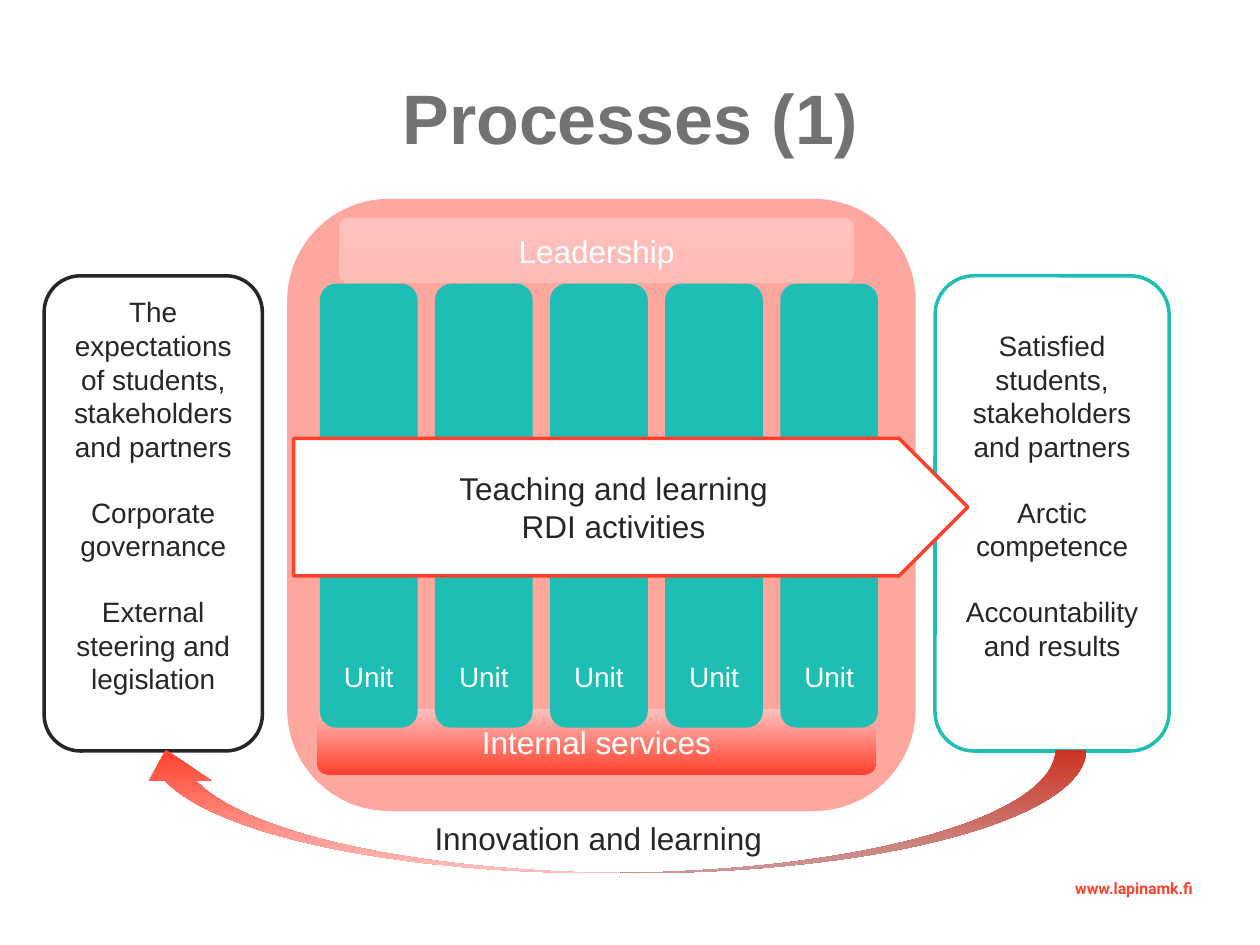
from pptx import Presentation
from pptx.dml.color import RGBColor
from pptx.enum.shapes import MSO_SHAPE
from pptx.enum.text import MSO_ANCHOR, PP_ALIGN
from pptx.util import Cm, Pt

ROUNDED = MSO_SHAPE.ROUNDED_RECTANGLE
PENTAGON = MSO_SHAPE.PENTAGON
CURVED_ARROW = MSO_SHAPE.CURVED_DOWN_ARROW
MIDDLE, BOTTOM = MSO_ANCHOR.MIDDLE, MSO_ANCHOR.BOTTOM
CENTER, LEFT = PP_ALIGN.CENTER, PP_ALIGN.LEFT

WHITE = RGBColor(0xFF, 0xFF, 0xFF)
DARK = RGBColor(0x26, 0x26, 0x26)
GREY = RGBColor(0x72, 0x72, 0x72)
RED = RGBColor(0xFF, 0x40, 0x2B)
SALMON = RGBColor(0xFE, 0xA7, 0x9E)
PINK = RGBColor(0xFD, 0xBC, 0xB5)
PALE_PINK = RGBColor(0xFF, 0xC0, 0xBE)
TEAL = RGBColor(0x1E, 0xBE, 0xB4)

UNIT_COUNT = 5
UNIT_LEFT, UNIT_STEP = 6.45, 2.32


def write_text(shape, lines, size, color, align=CENTER, anchor=MIDDLE,
               gap=0, font_name="Arial", bold=False):
    """Fill a shape with one paragraph per line; gap is the space between them."""
    text_frame = shape.text_frame
    text_frame.word_wrap = True
    text_frame.vertical_anchor = anchor
    text_frame.text = "\n".join(lines)
    for index, paragraph in enumerate(text_frame.paragraphs):
        paragraph.alignment = align
        paragraph.space_before = Pt(gap if index else 0)
        for run in paragraph.runs:
            run.font.name = font_name
            run.font.size = Pt(size)
            run.font.bold = bold
            run.font.color.rgb = color


def add_block(slide, kind, box, fill, line=None):
    """Add a shape; a pair of colours as fill makes a gradient from bottom to top."""
    shape = slide.shapes.add_shape(kind, *[Cm(value) for value in box])
    shape.shadow.inherit = False
    if isinstance(fill, list):
        shape.fill.gradient()
        shape.fill.gradient_angle = 90
        for stop, color, position in zip(shape.fill.gradient_stops, fill, (0, 1)):
            stop.color.rgb = color
            stop.position = position
    else:
        shape.fill.solid()
        shape.fill.fore_color.rgb = fill
    if line is None:
        shape.line.fill.background()
    else:
        shape.line.color.rgb = line
        shape.line.width = Pt(2)
    return shape


def add_label(slide, box, text, size, color, **style):
    label = slide.shapes.add_textbox(*[Cm(value) for value in box])
    write_text(label, [text], size, color, anchor=MSO_ANCHOR.TOP, **style)


def add_title(slide, text):
    title = slide.shapes.title
    title.left, title.top = Cm(1.27), Cm(0.76)
    title.width, title.height = Cm(22.86), Cm(3.18)
    write_text(title, [text], 40, GREY, bold=True)


def add_side_panel(slide, box, line, lines):
    panel = add_block(slide, ROUNDED, box, WHITE, line)
    write_text(panel, lines, 16, DARK, gap=18.4)
    panel.text_frame.margin_bottom = Cm(0.86)


def add_unit(slide, left):
    unit = add_block(slide, ROUNDED, (left, 5.72, 1.97, 8.95), TEAL)
    write_text(unit, ["Unit"], 16, WHITE, anchor=BOTTOM)
    unit.text_frame.margin_bottom = Cm(0.6)


def main():
    presentation = Presentation()
    presentation.slide_width, presentation.slide_height = Cm(25.4), Cm(19.05)
    slide = presentation.slides.add_slide(presentation.slide_layouts[5])

    add_title(slide, "Processes (1)")

    # Organisation with its inputs and results
    add_block(slide, ROUNDED, (5.79, 4.01, 12.67, 12.34), SALMON)
    add_side_panel(slide, (0.89, 5.56, 4.4, 9.58), DARK, [
        "The expectations of students, stakeholders and partners",
        "Corporate governance",
        "External steering and legislation"])
    add_side_panel(slide, (18.85, 5.56, 4.72, 9.58), TEAL, [
        "Satisfied students, stakeholders and partners",
        "Arctic competence",
        "Accountability and results"])

    # Horizontal layers behind the units
    services = add_block(slide, ROUNDED, (6.4, 14.3, 11.25, 1.32), [RED, PALE_PINK])
    write_text(services, ["Internal services"], 18, WHITE)
    leadership = add_block(slide, ROUNDED, (6.83, 4.39, 10.39, 1.32), [PINK, PALE_PINK])
    write_text(leadership, ["Leadership"], 18, WHITE)

    for index in range(UNIT_COUNT):
        add_unit(slide, UNIT_LEFT + index * UNIT_STEP)

    # Feedback loop from results to expectations
    feedback = add_block(slide, CURVED_ARROW, (2.72, 15.11, 19.18, 2.49), [RED, PALE_PINK])
    feedback.rotation = 180
    add_label(slide, (8.51, 16.38, 7.19, 1.02), "Innovation and learning",
              18, DARK, align=LEFT)

    # Core process across the units
    core = add_block(slide, PENTAGON, (5.92, 8.84, 13.59, 2.77), WHITE, RED)
    write_text(core, ["Teaching and learning", "RDI activities"], 18, DARK)

    # Web address
    add_label(slide, (20.32, 17.6, 5.08, 1.07), "www.lapinamk.fi",
              9, RED, font_name="Roboto", bold=True)

    presentation.save("out.pptx")


if __name__ == "__main__":
    main()
